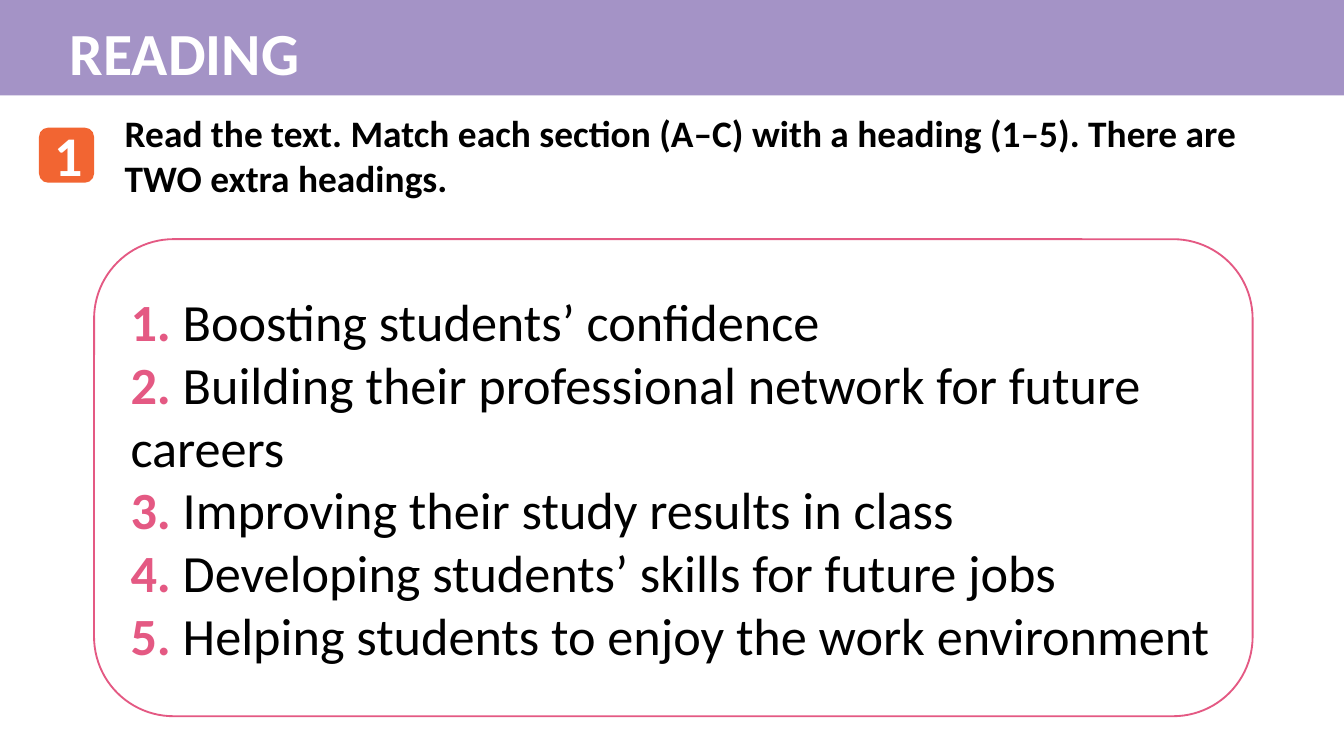
from pptx import Presentation
from pptx import util as u
from pptx.dml.color import RGBColor
from pptx.enum import shapes, text

INCH = 2.54
KINDS = shapes.MSO_SHAPE


def block(kind, left, top, width, height, fill=None, line=None):
    box = slide.shapes.add_shape(
        kind, *[u.Cm(n * INCH) for n in (left, top, width, height)])
    box.shadow.inherit = False
    if fill:
        box.fill.solid()
        box.fill.fore_color.rgb = RGBColor.from_string(fill)
    else:
        box.fill.background()
    if line:
        box.line.color.rgb = RGBColor.from_string(line)
        box.line.width = u.Pt(1)
    else:
        box.line.fill.background()
    return box


def write(para, words, size, color, bold=True):
    run = para.add_run()
    run.text = words
    look = {"name": "Calibri", "size": u.Pt(size), "bold": bold}
    for key, val in look.items():
        setattr(run.font, key, val)
    run.font.color.rgb = RGBColor.from_string(color)


deck = Presentation()
deck.slide_width, deck.slide_height = u.Cm(25.4), u.Cm(14.29)
slide = deck.slides.add_slide(deck.slide_layouts[5])
title = slide.shapes.title

# Header band, kept behind the title
band = block(KINDS.RECTANGLE, 0, 0, 10, 0.71, fill="A493C6")
title.element.addprevious(band.element)

# Task number badge
block(KINDS.ROUNDED_RECTANGLE, 0.29, 0.95, 0.41, 0.41, fill="F26532")

# Title, badge number and instruction
left, mid = text.PP_ALIGN.LEFT, text.PP_ALIGN.CENTER
task = ("Read the text. Match each section (A–C) with a heading (1–5). "
        "There are TWO extra headings.")
number = slide.shapes.add_textbox(0, 0, 0, 0)
prompt = slide.shapes.add_textbox(0, 0, 0, 0)
labels = [
    (title, (0.42, 0.07, 2.89, 0.64), "READING", 32, "FFFFFF", left),
    (number, (0.31, 0.85, 0.37, 0.61), "1", 30, "FFFFFF", mid),
    (prompt, (0.83, 0.77, 8.93, 0.77), task, 20, "000000", left),
]
for box, place, words, size, color, align in labels:
    for side, n in zip(("left", "top", "width", "height"), place):
        setattr(box, side, u.Cm(n * INCH))
    frame = box.text_frame
    form = {"word_wrap": True, "auto_size": text.MSO_AUTO_SIZE.NONE,
            "vertical_anchor": text.MSO_ANCHOR.TOP}
    for key, val in form.items():
        setattr(frame, key, val)
    para = frame.paragraphs[0]
    para.alignment = align
    write(para, words, size, color)

# Panel with the numbered headings
heads = [
    "Boosting students’ confidence",
    "Building their professional network for future careers",
    "Improving their study results in class",
    "Developing students’ skills for future jobs",
    "Helping students to enjoy the work environment",
]
panel = block(KINDS.ROUNDED_RECTANGLE, 0.7, 1.78, 8.62, 3.55, line="E45983")
frame = panel.text_frame
frame.word_wrap = True
frame.vertical_anchor = text.MSO_ANCHOR.MIDDLE
for i, head in enumerate(heads, 1):
    para = frame.paragraphs[0] if i == 1 else frame.add_paragraph()
    para.alignment = left
    write(para, f"{i}.", 28, "E45983")
    write(para, f" {head}", 28, "000000", bold=False)

deck.save("out.pptx")
